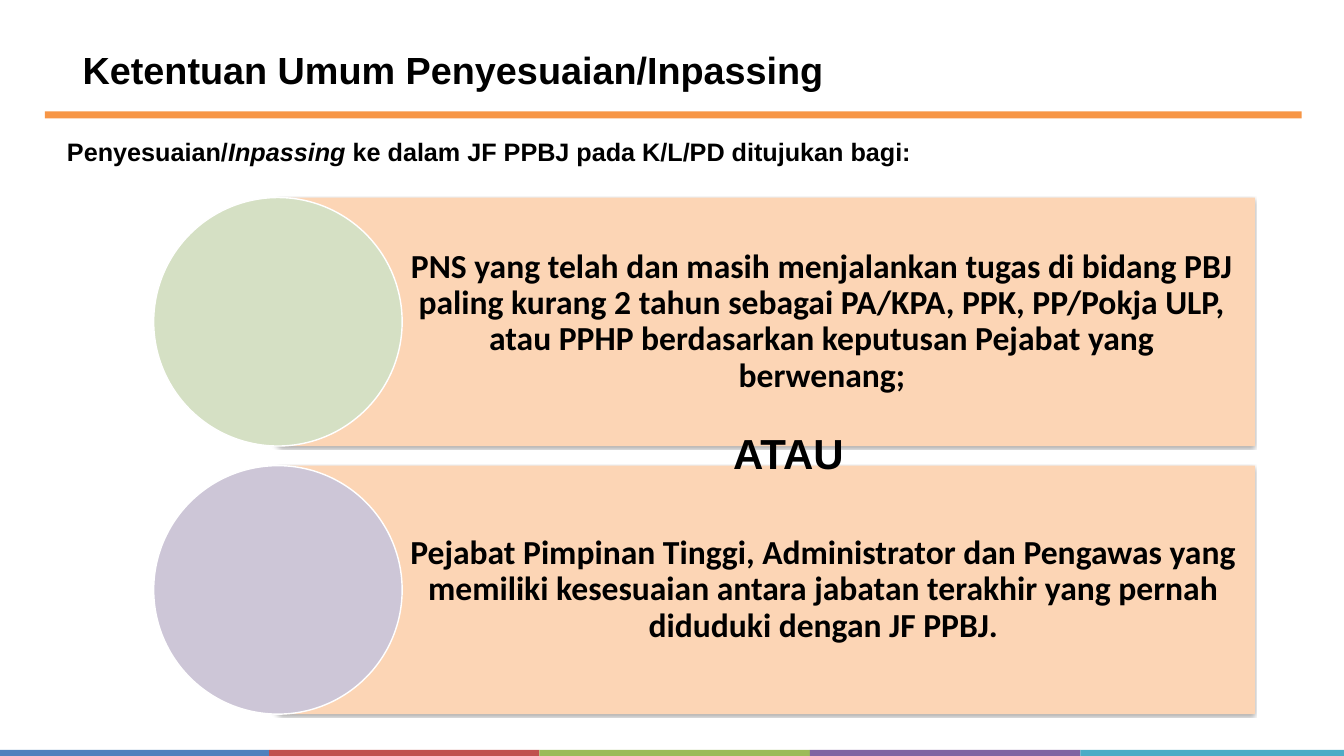
from lxml import etree
from pptx import Presentation
from pptx.dml.color import RGBColor
from pptx.enum.shapes import MSO_SHAPE
from pptx.enum.text import MSO_ANCHOR, PP_ALIGN
from pptx.oxml import parse_xml
from pptx.util import Pt

RECT, PLATE, OVAL = MSO_SHAPE.RECTANGLE, MSO_SHAPE.PENTAGON, MSO_SHAPE.OVAL
LEFT, CENTER = PP_ALIGN.LEFT, PP_ALIGN.CENTER
TOP, MIDDLE = MSO_ANCHOR.TOP, MSO_ANCHOR.MIDDLE
NS = "http://schemas.openxmlformats.org/drawingml/2006/main"

COLORS = {
    "text": "000000", "white": "FFFFFF", "rule": "F79646", "panel": "FCD5B5",
    "blue": "4F81BD", "red": "C0504D", "green": "9BBB59",
    "purple": "8064A2", "teal": "4BACC6",
    "sage": "D5E0C4", "lilac": "CDC6D7",
}

# Content
TITLE = "Ketentuan Umum Penyesuaian/Inpassing"
INTRO = [("Penyesuaian/", False), ("Inpassing", True),
         (" ke dalam JF PPBJ pada K/L/PD ditujukan bagi:", False)]
JOINER = "ATAU"
GROUPS = [  # text, circle colour, paragraph indent
    ("PNS yang telah dan masih menjalankan tugas di bidang PBJ paling kurang "
     "2 tahun sebagai PA/KPA, PPK, PP/Pokja ULP, atau PPHP berdasarkan "
     "keputusan Pejabat yang berwenang;", "sage", 114.5),
    ("Pejabat Pimpinan Tinggi, Administrator dan Pengawas yang memiliki "
     "kesesuaian antara jabatan terakhir yang pernah diduduki dengan JF PPBJ.",
     "lilac", 118.8),
]
STRIPES = ["blue", "red", "green", "purple", "teal"]

# Layout
ROW_TOP, ROW_H, ROW_STEP = 282.2, 355, 383
STRIPE_W = 386.4

deck = Presentation()
deck.slide_width, deck.slide_height = Pt(1920.24), Pt(1080)
slide = deck.slides.add_slide(deck.slide_layouts[6])


def rgb(name):
    return RGBColor.from_string(COLORS[name])


def add_block(kind, box, fill):
    shape = slide.shapes.add_shape(kind, *map(Pt, box))
    shape.shadow.inherit = False
    shape.fill.solid()
    shape.fill.fore_color.rgb = rgb(fill)
    shape.line.fill.background()
    return shape


def add_text(box, runs, size, font="Arial", align=LEFT, anchor=TOP,
             pads=(7.2, 3.6, 7.2, 3.6)):
    frame = slide.shapes.add_textbox(*map(Pt, box)).text_frame
    frame.word_wrap = True
    frame.vertical_anchor = anchor
    (frame.margin_left, frame.margin_top,
     frame.margin_right, frame.margin_bottom) = map(Pt, pads)
    para = frame.paragraphs[0]
    para.alignment = align
    for text, slant in runs:
        run = para.add_run()
        run.text = text
        run.font.name, run.font.size = font, Pt(size)
        run.font.bold, run.font.italic = True, slant
        run.font.color.rgb = rgb("text")
    return para


def add_shadow(shape):
    glow = parse_xml(
        f'<a:outerShdw xmlns:a="{NS}" blurRad="{Pt(3.1)}" dist="{Pt(1.8)}" '
        'dir="5400000" rotWithShape="0"><a:srgbClr val="000000">'
        '<a:alpha val="35000"/></a:srgbClr></a:outerShdw>')
    shape.element.spPr.find(etree.QName(NS, "effectLst").text).append(glow)


# Footer stripes
for i, color in enumerate(STRIPES):
    add_block(RECT, (-2 + i * STRIPE_W, 1071.4, STRIPE_W, 14.4), color)

# Title and rule
add_block(RECT, (64, 159.1, 1795.7, 10.1), "rule")
add_text((110.9, 62.6, 1627, 93.6), [(TITLE, False)], 54)

# Groups: panel, text, circle
for i, (text, color, indent) in enumerate(GROUPS):
    top = ROW_TOP + i * ROW_STEP
    panel = add_block(PLATE, (221.8, top, 1571, ROW_H), "panel")
    panel.rotation = 180
    add_shadow(panel)
    para = add_text((311, top, 1482.5, ROW_H), [(text, False)], 48, "Calibri",
                    CENTER, MIDDLE, (156.2, 14.4, 26.6, 14.4))
    para.line_spacing = 0.9
    para._p.get_or_add_pPr().set("marL", str(Pt(indent)))
    disc = add_block(OVAL, (219.6, top, ROW_H, ROW_H), color)
    disc.line.color.rgb = rgb("white")
    disc.line.width = Pt(2)

# Intro and joining word
add_text((88.6, 191.5, 1746, 51.1), INTRO, 36)
add_text((646.6, 607.7, 959.8, 79.9), [(JOINER, False)], 60, align=CENTER)

deck.save("out.pptx")
